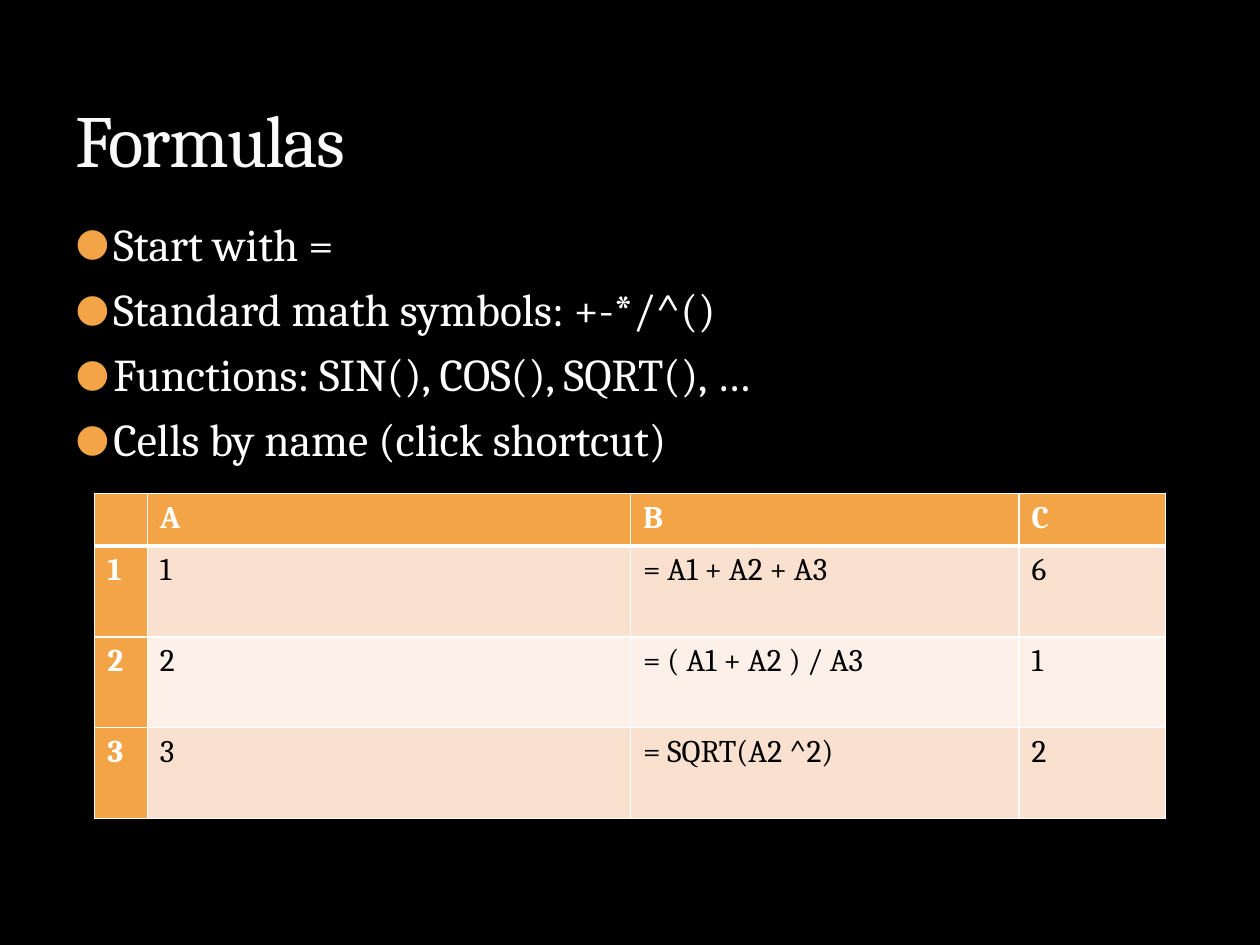
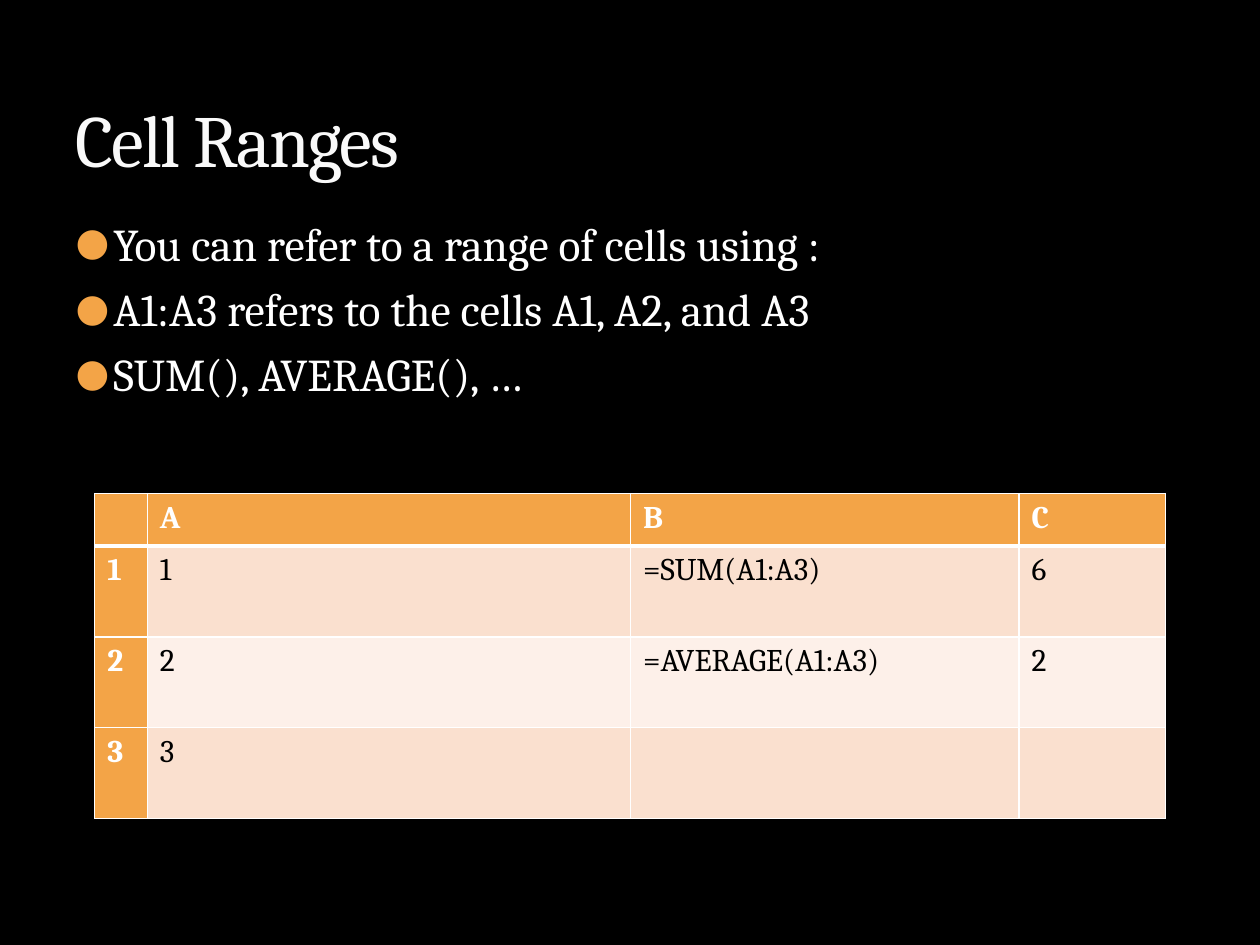
from pptx import Presentation
from pptx.dml.color import RGBColor
from pptx.enum.text import MSO_ANCHOR as Anchor, MSO_AUTO_SIZE as AutoSize, PP_ALIGN as Align
from pptx.oxml import parse_xml
from pptx.oxml.ns import nsdecls
from pptx.util import Cm, Pt

# Content
SLIDES = [
    {
        "title": "Formulas",
        "points": [
            "Start with =",
            "Standard math symbols: +-*/^()",
            "Functions: SIN(), COS(), SQRT(), …",
            "Cells by name (click shortcut)",
        ],
        "sheet": [
            ("1", "= A1 + A2 + A3", "6"),
            ("2", "= ( A1 + A2 ) / A3", "1"),
            ("3", "= SQRT(A2 ^2)", "2"),
        ],
    },
    {
        "title": "Cell Ranges",
        "points": [
            "You can refer to a range of cells using :",
            "A1:A3 refers to the cells A1, A2, and A3",
            "SUM(), AVERAGE(), …",
        ],
        "sheet": [
            ("1", "=SUM(A1:A3)", "6"),
            ("2", "=AVERAGE(A1:A3)", "2"),
            ("3", "", ""),
        ],
    },
]
COLUMN_NAMES = ("", "A", "B", "C")

# Shared style
FONT = "Cambria"
BLACK, WHITE, TITLE_WHITE = "000000", "FFFFFF", "F9F9F9"
ORANGE, OUTLINE = "F3A447", "3C4422"
BANDS = ("FAE0CF", "FDF0E9")

# Layout in centimetres: left, top, width, height
TITLE_BOX = (1.27, 0.42, 22.86, 3.39)
BODY_BOX = (1.27, 4.23, 22.86, 12.7)
TABLE_LEFT, TABLE_TOP = 1.91, 9.95
COLUMN_WIDTHS = (1.06, 9.74, 7.83, 2.96)
HEADER_HEIGHT, ROW_HEIGHT = 1.06, 1.83
INDENT = Cm(0.76)


def color(hex_text):
    return RGBColor.from_string(hex_text)


def add_xml(parent, tag, attributes="", content="", index=None):
    element = parse_xml(f'<a:{tag} {nsdecls("a")} {attributes}>{content}</a:{tag}>')
    parent.insert(len(parent) if index is None else index, element)


def solid(hex_text, content=""):
    return f'<a:solidFill><a:srgbClr val="{hex_text}">{content}</a:srgbClr></a:solidFill>'


def style_runs(para, size, hex_text, bold=False):
    for span in para.runs:
        span.font.name = FONT
        span.font.size = Pt(size)
        span.font.bold = bold
        span.font.color.rgb = color(hex_text)


def place(box, bounds, anchor):
    box.left, box.top, box.width, box.height = map(Cm, bounds)
    box.text_frame.auto_size = AutoSize.NONE
    box.text_frame.vertical_anchor = anchor


def fill_title(box, text):
    place(box, TITLE_BOX, Anchor.BOTTOM)
    box.text_frame.text = text
    para = box.text_frame.paragraphs[0]
    para.alignment = Align.LEFT
    style_runs(para, 42, TITLE_WHITE)
    # Tight letters with a faint outline
    properties = para.runs[0].font._element
    properties.set("spc", "-100")
    add_xml(properties, "ln", 'w="3175"', solid(OUTLINE, '<a:alpha val="25000"/>'), 0)


def fill_points(box, points):
    place(box, BODY_BOX, Anchor.TOP)
    box.text_frame.text = "\n".join(points)
    for para in box.text_frame.paragraphs:
        para.space_before = Pt(6)
        style_runs(para, 26, WHITE)
        properties = para._p.get_or_add_pPr()
        properties.set("marL", str(INDENT))
        properties.set("indent", str(-INDENT))
        add_xml(properties, "buClr", content=f'<a:srgbClr val="{ORANGE}"/>')
        add_xml(properties, "buSzPct", 'val="85000"')
        add_xml(properties, "buFont", f'typeface="{FONT}"')
        add_xml(properties, "buChar", 'char="●"')


def format_cell(cell, text, row, column):
    is_heading = row == 0 or column == 0
    cell.text = text
    style_runs(cell.text_frame.paragraphs[0], 18,
               WHITE if is_heading else BLACK, is_heading)
    # A thick rule runs between the header and the first row
    thick_side = {0: "lnB", 1: "lnT"}.get(row)
    for side in ("lnL", "lnR", "lnT", "lnB"):
        width = Pt(3 if side == thick_side else 1)
        add_xml(cell._tc.get_or_add_tcPr(), side, f'w="{width}"', solid(WHITE))
    cell.fill.solid()
    cell.fill.fore_color.rgb = color(ORANGE if is_heading else BANDS[(row - 1) % 2])


def add_sheet(page, sheet):
    rows = [COLUMN_NAMES] + [(str(number), *values)
                             for number, values in enumerate(sheet, 1)]
    heights = [HEADER_HEIGHT] + [ROW_HEIGHT] * len(sheet)
    table = page.shapes.add_table(
        len(rows), len(COLUMN_NAMES), Cm(TABLE_LEFT), Cm(TABLE_TOP),
        Cm(sum(COLUMN_WIDTHS)), Cm(sum(heights))).table
    for column, width in zip(table.columns, COLUMN_WIDTHS):
        column.width = Cm(width)
    for row, height in zip(table.rows, heights):
        row.height = Cm(height)
    for row, values in enumerate(rows):
        for column, text in enumerate(values):
            format_cell(table.cell(row, column), text, row, column)


def main():
    deck = Presentation()
    deck.slide_width, deck.slide_height = Cm(25.4), Cm(19.05)
    background = deck.slide_master.background.fill
    background.solid()
    background.fore_color.rgb = color(BLACK)

    for content in SLIDES:
        page = deck.slides.add_slide(deck.slide_layouts[1])
        fill_title(page.shapes.title, content["title"])
        fill_points(page.placeholders[1], content["points"])
        add_sheet(page, content["sheet"])
    deck.save("out.pptx")


if __name__ == "__main__":
    main()
